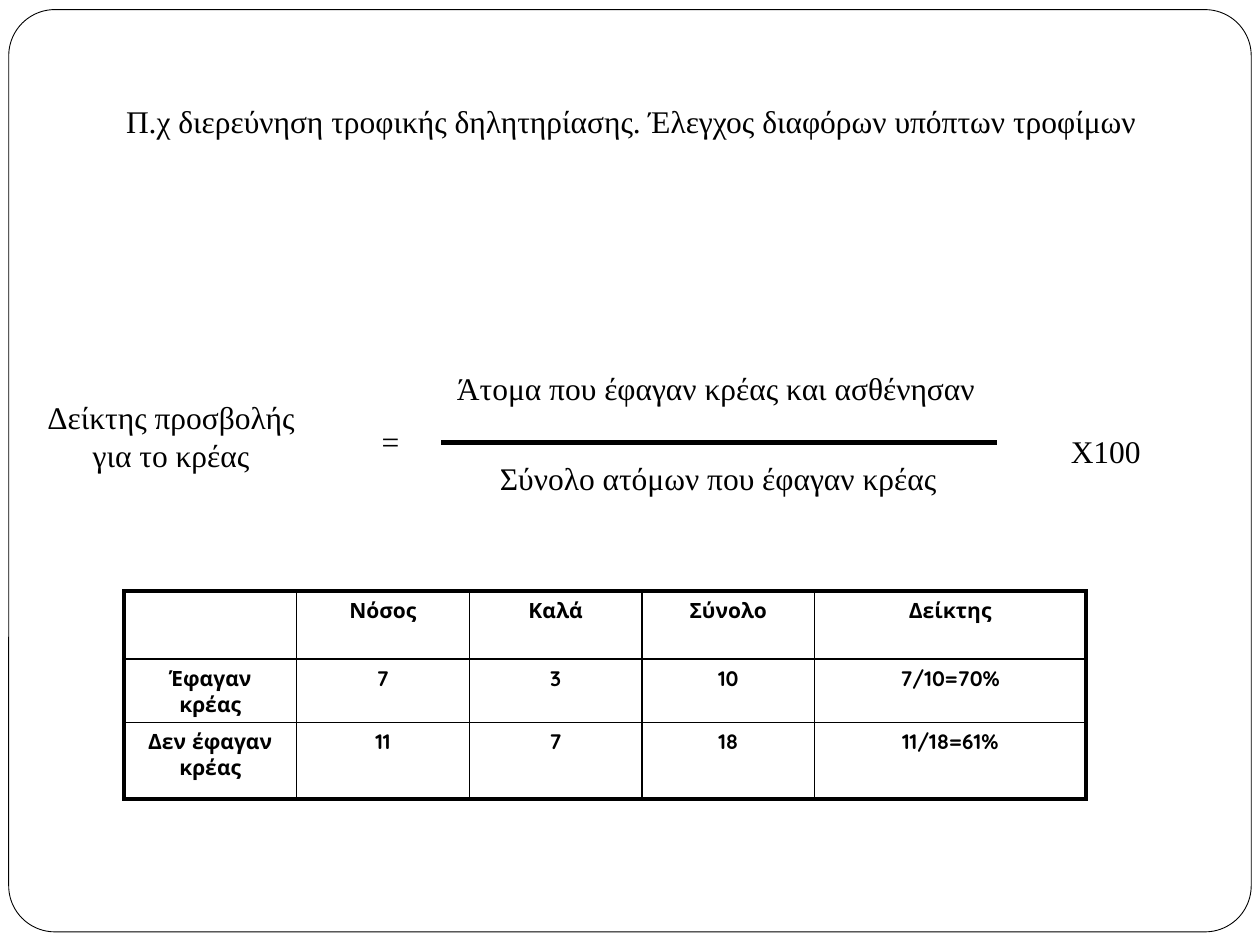
from dataclasses import dataclass

from lxml.etree import SubElement
from pptx import Presentation
from pptx.dml.color import RGBColor
from pptx.enum.shapes import MSO_CONNECTOR as CONN, MSO_SHAPE as SHAPE
from pptx.enum.text import MSO_ANCHOR as ANCHOR, MSO_AUTO_SIZE as FIT, PP_ALIGN as ALIGN
from pptx.oxml.ns import qn
from pptx.util import Pt


@dataclass(frozen=True)
class Theme:
    ink: RGBColor = RGBColor(0, 0, 0)
    paper: RGBColor = RGBColor(255, 255, 255)
    body_font: str = "Times New Roman"
    table_font: str = "Quicksand"
    body_size: float = 18
    table_size: float = 12
    frame_line: float = 0.5
    bar_line: float = 3
    outer_line: float = 2.25
    inner_line: float = 1


class Deck:
    def __init__(self, theme, width, height):
        self.theme = theme
        self.prs = Presentation()
        self.prs.slide_width, self.prs.slide_height = Pt(width), Pt(height)
        self.s = self.prs.slides.add_slide(self.prs.slide_layouts[5])

    def add_lines(self, tf, lines, font, size, align=ALIGN.LEFT, bold=False):
        for i, line in enumerate(lines):
            p = tf.add_paragraph() if i else tf.paragraphs[0]
            p.alignment = align
            p.space_before = Pt(0)
            r = p.add_run()
            r.text = line
            r.font.name, r.font.size, r.font.bold = font, Pt(size), bold
            r.font.color.rgb = self.theme.ink

    def frame(self, x, y, w, h, radius):
        sp = self.s.shapes.add_shape(SHAPE.ROUNDED_RECTANGLE, Pt(x), Pt(y), Pt(w), Pt(h))
        sp.adjustments[0] = radius
        sp.shadow.inherit = False
        sp.fill.solid()
        sp.fill.fore_color.rgb = self.theme.paper
        sp.line.color.rgb = self.theme.ink
        sp.line.width = Pt(self.theme.frame_line)
        self.s.shapes._spTree.insert(2, sp._element)

    def title(self, text, x, y, w, h):
        sp = self.s.shapes.title
        sp.left, sp.top, sp.width, sp.height = Pt(x), Pt(y), Pt(w), Pt(h)
        tf = sp.text_frame
        tf.word_wrap, tf.auto_size = True, FIT.NONE
        tf.vertical_anchor = ANCHOR.TOP
        self.add_lines(tf, [text], self.theme.body_font, self.theme.body_size)

    def label(self, lines, x, y, w, h, align=ALIGN.LEFT):
        tf = self.s.shapes.add_textbox(Pt(x), Pt(y), Pt(w), Pt(h)).text_frame
        tf.word_wrap, tf.auto_size = False, FIT.SHAPE_TO_FIT_TEXT
        self.add_lines(tf, lines, self.theme.body_font, self.theme.body_size, align)

    def bar(self, x1, x2, y):
        ln = self.s.shapes.add_connector(CONN.STRAIGHT, Pt(x1), Pt(y), Pt(x2), Pt(y))
        ln.line.color.rgb = self.theme.ink
        ln.line.width = Pt(self.theme.bar_line)
        SubElement(ln._element.spPr, qn("a:effectLst"))

    def borders(self, cell, outer):
        tc_pr = cell._tc.get_or_add_tcPr()
        for side, is_outer in zip("LRTB", outer):
            width = self.theme.outer_line if is_outer else self.theme.inner_line
            ln = SubElement(tc_pr, qn(f"a:ln{side}"), w=str(Pt(width)))
            fill = SubElement(ln, qn("a:solidFill"))
            SubElement(fill, qn("a:srgbClr"), val=str(self.theme.ink))

    def table(self, rows, x, y, widths, heights):
        n_rows, n_cols = len(heights), len(widths)
        table = self.s.shapes.add_table(
            n_rows, n_cols, Pt(x), Pt(y), Pt(sum(widths)), Pt(sum(heights))).table
        table.first_row = table.horz_banding = False
        for col, w in zip(table.columns, widths):
            col.width = Pt(w)
        for row, h in zip(table.rows, heights):
            row.height = Pt(h)
        for i, row in enumerate(rows):
            for j, text in enumerate(row):
                cell = table.cell(i, j)
                self.borders(cell, (j == 0, j == n_cols - 1, i == 0, i == n_rows - 1))
                cell.fill.background()
                if text:
                    self.add_lines(cell.text_frame, [text], self.theme.table_font,
                                   self.theme.table_size, ALIGN.CENTER, True)


def main():
    deck = Deck(Theme(), 720, 540)
    deck.frame(5, 5.5, 710, 527, 0.05)
    deck.title("Π.χ διερεύνηση τροφικής δηλητηρίασης. Έλεγχος διαφόρων υπόπτων τροφίμων",
               64.8, 54.7, 618, 50.4)

    deck.label(["Δείκτης προσβολής", "για το κρέας"], 15, 224, 165.6, 51, ALIGN.CENTER)
    deck.label(["="], 211, 237.6, 25, 29)
    deck.label(["Άτομα που έφαγαν κρέας και ασθένησαν"], 254, 207.4, 336, 29)
    deck.bar(252, 569.5, 252.7)
    deck.label(["Σύνολο ατόμων που έφαγαν κρέας"], 278.6, 258.5, 284.4, 29)
    deck.label(["Χ100"], 604.8, 243.4, 56, 29)

    rows = [
        ["", "Νόσος", "Καλά", "Σύνολο", "Δείκτης"],
        ["Έφαγαν κρέας", "7", "3", "10", "7/10=70%"],
        ["Δεν έφαγαν κρέας", "11", "7", "18", "11/18=61%"],
    ]
    deck.table(rows, 70.8, 337.8, [98.7] * 4 + [155], [38.9, 33.1, 43.9])
    deck.prs.save("out.pptx")


if __name__ == "__main__":
    main()
